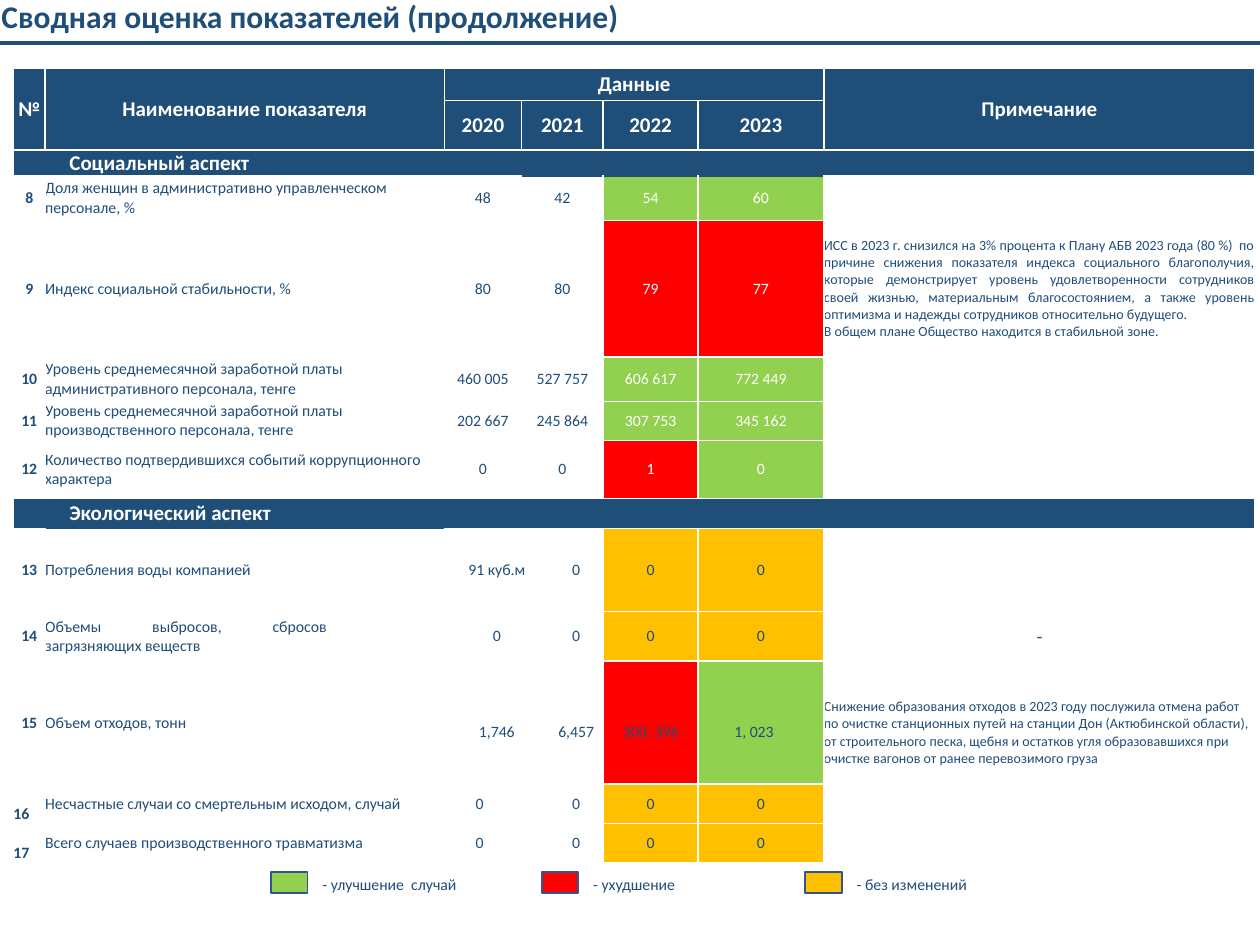
import pptx
import pptx.util
import pptx.dml.color
import pptx.enum.text
import pptx.enum.shapes
import pptx.oxml
import pptx.oxml.ns
from pptx.util import Cm

HUES = {"navy": "1F4E79", "white": "FFFFFF", "green": "92D050",
        "red": "FF0000", "amber": "FFC000", "edge": "325491"}
ALIGN = pptx.enum.text.PP_ALIGN
ANCHOR = pptx.enum.text.MSO_ANCHOR
SIDES = ("margin_left", "margin_right", "margin_top", "margin_bottom")

COLS = [0.64, 8.05, 1.55, 0.56, 1.09, 1.91, 2.54, 8.69]
ROWS = [0.65, 0.99, 0.53, 0.89, 2.76, 0.89, 0.79,
        1.17, 0.61, 1.67, 1, 2.48, 0.79, 0.79]

# number, name, four yearly values, colours of the last two, note
SOCIAL = [
    ("8", "Доля женщин в административно управленческом персонале, %",
     ("48", "42", "54", "60"), ("green", "green"), ""),
    ("9", "Индекс социальной стабильности, %",
     ("80", "80", "79", "77"), ("red", "red"),
     "ИСС в 2023 г. снизился на 3% процента к Плану АБВ 2023 года (80 %)  по "
     "причине снижения показателя индекса социального благополучия, которые "
     "демонстрирует уровень удовлетворенности сотрудников своей жизнью, "
     "материальным благосостоянием, а также уровень оптимизма и надежды "
     "сотрудников относительно будущего.\n"
     "В общем плане Общество находится в стабильной зоне."),
    ("10", "Уровень среднемесячной заработной платы административного персонала, тенге",
     ("460 005", "527 757", "606 617", "772 449"), ("green", "green"), ""),
    ("11", "Уровень среднемесячной заработной платы производственного персонала, тенге",
     ("202 667", "245 864", "307 753", "345 162"), ("green", "green"), ""),
    ("12", "Количество подтвердившихся событий коррупционного характера",
     ("0", "0", "1", "0"), ("red", "green"), ""),
]
NATURE = [
    ("13", "Потребления воды компанией",
     ("91 куб.м", "0", "0", "0"), ("amber", "amber"), ""),
    ("14", "Объемы выбросов, сбросов загрязняющих веществ",
     ("0", "0", "0", "0"), ("amber", "amber"), "-"),
    ("15", "Объем отходов, тонн",
     ("1,746", "6,457", "300, 396", "1, 023"), ("red", "green"),
     "Снижение образования отходов в 2023 году послужила отмена работ по очистке "
     "станционных путей на станции Дон (Актюбинской области), от строительного "
     "песка, щебня и остатков угля образовавшихся при очистке вагонов от ранее "
     "перевозимого груза"),
    ("16", "Несчастные случаи со смертельным исходом, случай",
     ("0", "0", "0", "0"), ("amber", "amber"), ""),
    ("17", "Всего случаев производственного травматизма",
     ("0", "0", "0", "0"), ("amber", "amber"), ""),
]
HEAD = {"size": 12, "bold": True, "hue": "white", "fill": "navy", "align": ALIGN.CENTER}
LEGEND = [(5.46, "green", "- улучшение  случай", 3.43),
          (10.92, "red", "- ухудшение", 2.18),
          (16.23, "amber", "- без изменений", 2.74)]


def tint(name):
    return pptx.dml.color.RGBColor.from_string(HUES[name])


def put(item, values):
    for name, value in values.items():
        setattr(item, name, value)


class Page:
    font = "Calibri"

    def __init__(self, deck):
        self.slide = deck.slides.add_slide(deck.slide_layouts[5])
        self.shapes = self.slide.shapes

    def words(self, frame, text, size=9, bold=False, hue="navy", align=ALIGN.LEFT):
        frame.text = text
        for para in frame.paragraphs:
            put(para, {"alignment": align, "space_before": pptx.util.Pt(0)})
            for run in para.runs:
                put(run.font, {"name": self.font, "size": pptx.util.Pt(size), "bold": bold})
                run.font.color.rgb = tint(hue)

    def title(self, text):
        box = self.shapes.title
        put(box, {"left": Cm(0), "top": Cm(0.03), "width": Cm(24.33), "height": Cm(0.84)})
        frame = box.text_frame
        put(frame, dict.fromkeys(SIDES, 0))
        put(frame, {"margin_left": Cm(0.03), "vertical_anchor": ANCHOR.MIDDLE,
                    "auto_size": pptx.enum.text.MSO_AUTO_SIZE.NONE})
        self.words(frame, text, 18, True)
        frame.paragraphs[0].line_spacing = pptx.util.Pt(14.5)

    def rule(self, y):
        line = self.shapes.add_connector(
            pptx.enum.shapes.MSO_CONNECTOR.STRAIGHT, 0, Cm(y), Cm(25.4), Cm(y))
        line.line.color.rgb = tint("navy")
        line.line.width = pptx.util.Pt(2.25)
        line._element.spPr.append(pptx.oxml.parse_xml(
            f"<a:effectLst {pptx.oxml.ns.nsdecls('a')}/>"))

    def swatch(self, x, y, hue):
        box = self.shapes.add_shape(
            pptx.enum.shapes.MSO_SHAPE.RECTANGLE, Cm(x), Cm(y), Cm(0.74), Cm(0.43))
        box.shadow.inherit = False
        box.fill.solid()
        box.fill.fore_color.rgb = tint(hue)
        box.line.color.rgb = tint("edge")
        box.line.width = pptx.util.Pt(1)

    def label(self, x, y, wide, text):
        box = self.shapes.add_textbox(Cm(x), Cm(y), Cm(wide), Cm(0.64))
        box.text_frame.word_wrap = False
        self.words(box.text_frame, text)

    def table(self, x, y):
        grid = self.shapes.add_table(len(ROWS), len(COLS), Cm(x), Cm(y),
                                     Cm(sum(COLS)), Cm(sum(ROWS))).table
        put(grid, {"first_row": False, "horz_banding": False})
        for col, wide in zip(grid.columns, COLS):
            col.width = Cm(wide)
        for row, high in zip(grid.rows, ROWS):
            row.height = Cm(high)
        for cell in grid.iter_cells():
            put(cell, dict.fromkeys(SIDES, 0))
        self.grid = grid

    def edge(self, cell, side, hue):
        cell._tc.get_or_add_tcPr().append(pptx.oxml.parse_xml(
            f'<a:ln{side} w="12700" {pptx.oxml.ns.nsdecls("a")}><a:solidFill>'
            f'<a:srgbClr val="{HUES[hue]}"/></a:solidFill></a:ln{side}>'))

    def cell(self, row, col, text, span=(1, 1), fill="white", top="white",
             sides="LRTB", pad=None, anchor=ANCHOR.MIDDLE, **look):
        cell = self.grid.cell(row, col)
        if span != (1, 1):
            cell.merge(self.grid.cell(row + span[0] - 1, col + span[1] - 1))
        for r in range(row, row + span[0]):
            for c in range(col, col + span[1]):
                for side in sides:
                    self.edge(self.grid.cell(r, c), side, top if side == "T" else "white")
        cell.fill.solid()
        cell.fill.fore_color.rgb = tint(fill)
        put(cell, {"vertical_anchor": anchor, **(pad or {})})
        self.words(cell.text_frame, text, **look)

    def section(self, row, text):
        self.cell(row, 0, text, (1, 8), sides="LRT", pad={"margin_left": Cm(1.13)},
                  **{**HEAD, "align": ALIGN.LEFT})

    def record(self, row, data, spans, hue, dark):
        """Fill one indicator row; dark lists the columns with a navy top edge."""
        mark, name, values, fills, note = data
        low = mark in ("16", "17")
        self.cell(row, 0, mark, bold=True, align=ALIGN.LEFT if low else ALIGN.CENTER,
                  anchor=ANCHOR.BOTTOM if low else ANCHOR.MIDDLE)
        wide = mark == "14"
        self.cell(row, 1, name, top="navy" if 1 in dark else "white",
                  align=ALIGN.JUSTIFY if wide else ALIGN.LEFT,
                  pad={"margin_right": Cm(2.38)} if wide else None)
        drop = {"margin_top": Cm(0.4)} if mark == "15" else {}
        for i, (col, span) in enumerate(spans):
            pad = dict(drop)
            if low and i == 0:
                pad["margin_right"] = Cm(0.69)
            if drop and i == 3:
                pad["margin_right"] = Cm(0.28)
            self.cell(row, col, values[i], (1, span), pad=pad, align=ALIGN.CENTER,
                      fill=fills[i - 2] if i > 1 else "white",
                      hue=hue if i > 1 else "navy",
                      top="navy" if col in dark else "white")
        dash = note == "-"
        self.cell(row, 7, note, pad=drop, size=11 if dash else 8,
                  align=ALIGN.CENTER if dash else ALIGN.LEFT if drop else ALIGN.JUSTIFY)


def main():
    deck = pptx.Presentation()
    put(deck, {"slide_width": Cm(25.4), "slide_height": Cm(19.05)})
    page = Page(deck)
    page.rule(0.86)
    page.title("Сводная оценка показателей (продолжение)")

    page.table(0.27, 1.38)
    for col, text, span in [(0, "№", (2, 1)), (1, "Наименование показателя", (2, 1)),
                            (2, "Данные", (1, 5)), (7, "Примечание", (2, 1))]:
        page.cell(0, col, text, span, **HEAD)
    early = [(2, 1), (3, 2), (5, 1), (6, 1)]
    late = [(2, 2), (4, 1), (5, 1), (6, 1)]
    for year, (col, span) in enumerate(early, 2020):
        page.cell(1, col, str(year), (1, span), **HEAD)
    for start, text, group, spans, hue, dark in [
            (2, "Социальный аспект", SOCIAL, early, "white", (3, 5, 6)),
            (8, "Экологический аспект", NATURE, late, "navy", (1,))]:
        page.section(start, text)
        for row, data in enumerate(group, start + 1):
            page.record(row, data, spans, hue, dark if row == start + 1 else ())

    for x, hue, text, wide in LEGEND:
        page.swatch(x, 17.58, hue)
        page.label(x + 0.79, 17.5, wide, text)
    deck.save("out.pptx")


if __name__ == "__main__":
    main()
